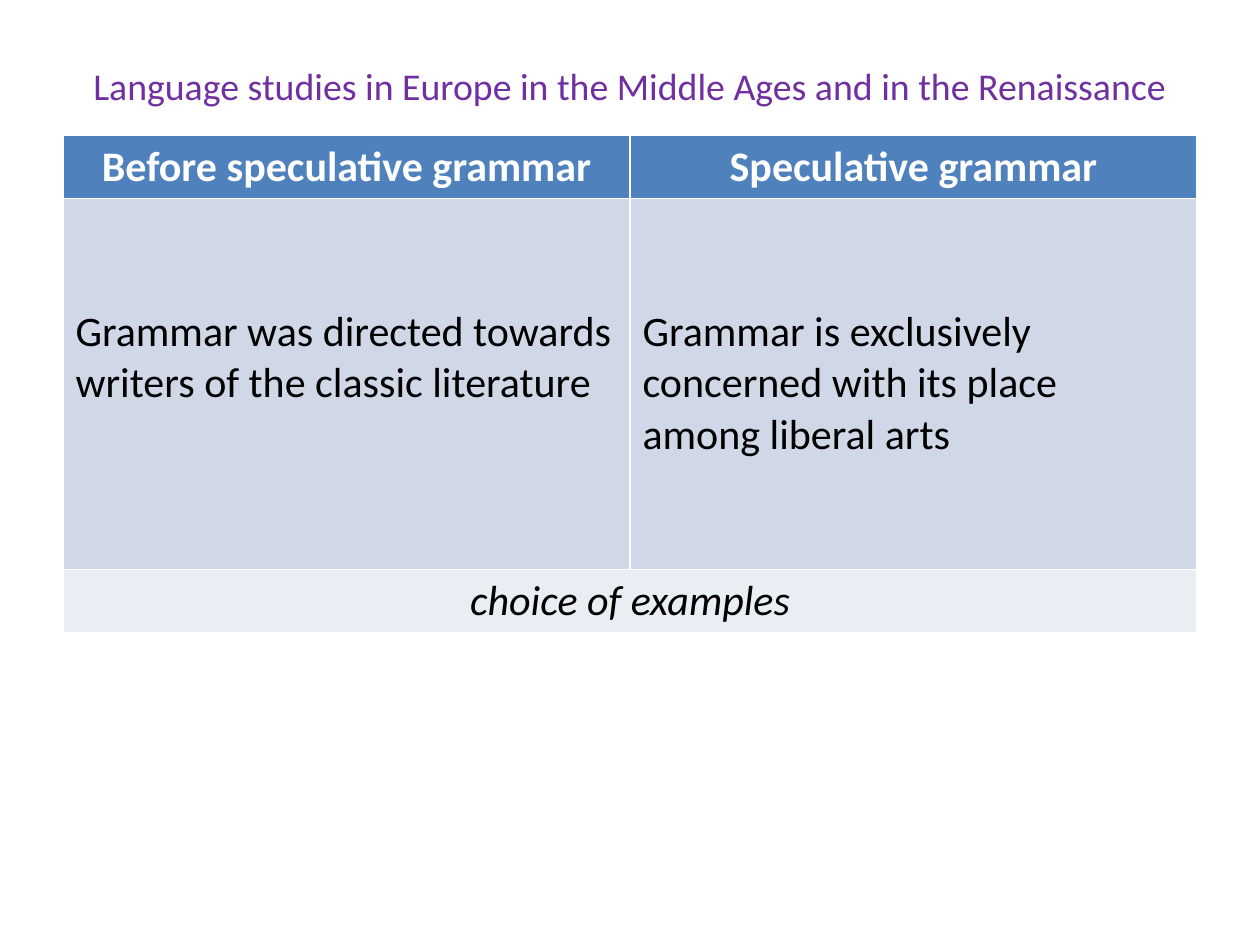
from pptx import Presentation
from pptx.dml.color import RGBColor
from pptx.enum.text import MSO_ANCHOR, PP_ALIGN
from pptx.util import Inches, Pt

CENTER, LEFT = PP_ALIGN.CENTER, PP_ALIGN.LEFT
MIDDLE = MSO_ANCHOR.MIDDLE
PURPLE = RGBColor(0x70, 0x30, 0xA0)
WHITE = RGBColor(0xFF, 0xFF, 0xFF)
BLACK = RGBColor(0x00, 0x00, 0x00)
HEADER_BLUE = RGBColor(0x4F, 0x81, 0xBD)
BODY_BLUE = RGBColor(0xD0, 0xD8, 0xE8)
FOOTER_BLUE = RGBColor(0xE9, 0xED, 0xF4)

SLIDE_WIDTH, SLIDE_HEIGHT = Inches(10), Inches(7.5)
MARGIN = SLIDE_WIDTH * 0.05
CONTENT_WIDTH = SLIDE_WIDTH * 0.9
TITLE_TOP, TITLE_HEIGHT = SLIDE_HEIGHT * 0.04, SLIDE_HEIGHT * 0.1
TABLE_TOP, TABLE_HEIGHT = SLIDE_HEIGHT * 0.143, Inches(3.95)
ROW_SHARES = (0.127, 0.746, 0.127)
BODY_DROP = Inches(0.86)

TITLE = "Language studies in Europe in the Middle Ages and in the Renaissance"
HEADINGS = ("Before speculative grammar", "Speculative grammar")
VIEWS = (
    "Grammar was directed towards writers of the classic literature",
    "Grammar is exclusively concerned with its place among liberal arts",
)
SHARED_TOPIC = "choice of examples"


def style_text(paragraph, text, size, color, align, bold=False, italic=False):
    """Write one paragraph in the slide's typeface."""
    paragraph.text = text
    paragraph.alignment = align
    font = paragraph.font
    font.name, font.size = "Calibri", Pt(size)
    font.bold, font.italic = bold, italic
    font.color.rgb = color


def add_title(slide, left, top, width, height):
    """Place the centred heading in the given box."""
    frame = slide.shapes.add_textbox(left, top, width, height).text_frame
    frame.word_wrap = True
    frame.vertical_anchor = MIDDLE
    style_text(frame.paragraphs[0], TITLE, 21.6, PURPLE, CENTER)


def fill_cell(cell, text, fill, color, align, **emphasis):
    """Fill and write one table cell."""
    cell.fill.solid()
    cell.fill.fore_color.rgb = fill
    style_text(cell.text_frame.paragraphs[0], text, 24, color, align, **emphasis)


def add_comparison(slide, left, top, width, height):
    """Place the two-column comparison with its shared bottom row."""
    table = slide.shapes.add_table(
        len(ROW_SHARES), len(HEADINGS), left, top, width, height
    ).table
    for row, share in zip(table.rows, ROW_SHARES):
        row.height = int(height * share)
    for column, (heading, view) in enumerate(zip(HEADINGS, VIEWS)):
        fill_cell(table.cell(0, column), heading, HEADER_BLUE, WHITE, CENTER, bold=True)
        body = table.cell(1, column)
        body.margin_top = BODY_DROP
        fill_cell(body, view, BODY_BLUE, BLACK, LEFT)
    shared = table.cell(2, 0)
    shared.merge(table.cell(2, len(HEADINGS) - 1))
    fill_cell(shared, SHARED_TOPIC, FOOTER_BLUE, BLACK, CENTER, italic=True)


def main():
    """Build and save the slide."""
    deck = Presentation()
    deck.slide_width, deck.slide_height = SLIDE_WIDTH, SLIDE_HEIGHT
    slide = deck.slides.add_slide(deck.slide_layouts[6])
    add_title(slide, int(MARGIN), int(TITLE_TOP), int(CONTENT_WIDTH), int(TITLE_HEIGHT))
    add_comparison(
        slide, int(MARGIN), int(TABLE_TOP), int(CONTENT_WIDTH), TABLE_HEIGHT
    )
    deck.save("out.pptx")


if __name__ == "__main__":
    main()
